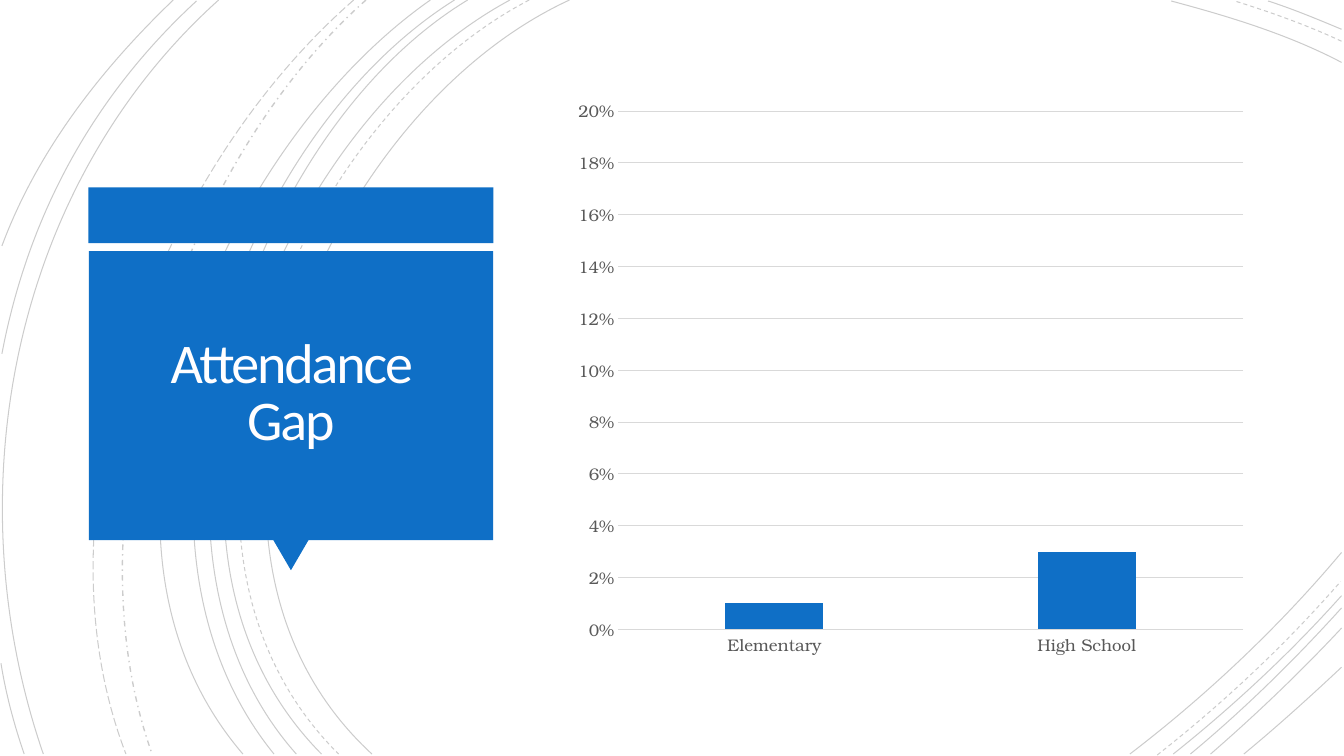
from dataclasses import dataclass

from lxml.etree import SubElement
from pptx import Presentation
from pptx.chart.data import CategoryChartData
from pptx.dml.color import RGBColor
from pptx.enum.chart import XL_CHART_TYPE, XL_TICK_MARK
from pptx.enum.dml import MSO_LINE
from pptx.enum.shapes import MSO_SHAPE
from pptx.enum.text import MSO_ANCHOR, PP_ALIGN
from pptx.oxml.ns import qn
from pptx.slide import Slide
from pptx.util import Pt

BLUE = RGBColor(0x0F, 0x6F, 0xC6)
WHITE = RGBColor(0xFF, 0xFE, 0xFF)
BLACK = RGBColor(0x00, 0x00, 0x00)
GREY_TEXT = RGBColor(0x59, 0x59, 0x59)
GREY_LINE = RGBColor(0xD9, 0xD9, 0xD9)
TITLE_FONT = "Calibri"
CHART_FONT = "TeX Gyre Bonum"


@dataclass
class Arc:
    """A cubic curve: start, two controls and end, as x, y pairs in points."""
    points: tuple[float, ...]
    dash: MSO_LINE = MSO_LINE.SOLID
    width: float = 0.75


@dataclass
class Block:
    kind: MSO_SHAPE
    left: float
    top: float
    width: float
    height: float
    rotation: float = 0


ARCS = [
    # Left sweep, from the inside out
    Arc((406.8, 0, 226.8, 82.8, 103, 388.8, 265.7, 538.6)),
    Arc((378, 0, 205.2, 90, 88.6, 386.6, 241.9, 538.6), MSO_LINE.DASH),
    Arc((364.3, 0, 194.4, 91.4, 79.2, 386.6, 229.7, 538.6)),
    Arc((334.1, 0, 175.7, 95.8, 79.2, 389.5, 211.7, 538.6)),
    Arc((324.7, 0, 166.3, 99.4, 69.8, 383.8, 195.8, 538.6)),
    Arc((307.4, 0, 156.2, 105.8, 38.2, 380.9, 173.5, 538.6)),
    Arc((261.4, 0, 126.7, 119.5, 46.8, 366.5, 108.7, 538.6), MSO_LINE.DASH_DOT, 1),
    Arc((252.7, 0, 113, 121.7, 20.9, 359.3, 90, 538.6), MSO_LINE.LONG_DASH),
    Arc((156.2, 0, 7.9, 133.2, -33.1, 352.8, 31, 538.6)),
    Arc((140.4, 0.7, 66.2, 69.1, 20.2, 154.1, 1.4, 252.7)),
    Arc((0.7, 473.8, 4.3, 496.1, 10.1, 517.7, 17.3, 538.6)),
    Arc((123.8, 0, 72, 49.7, 26.6, 108, 1.4, 175.7)),
    # Top right corner
    Arc((958.3, 44.6, 920.2, 24.5, 877, 11.5, 836.6, 0.7)),
    Arc((958.3, 29.5, 933.8, 18, 907.2, 8.6, 882, 0.7), MSO_LINE.DASH),
    Arc((958.3, 20.9, 941, 13.7, 923.8, 6.5, 905.8, 0.7)),
    # Bottom right corner
    Arc((807.1, 538.6, 861.8, 496.8, 913.7, 447.8, 958.3, 394.6)),
    Arc((826.6, 539.3, 873.4, 502.6, 918, 460.8, 957.6, 415.4), MSO_LINE.DASH),
    Arc((838.1, 538.6, 880.6, 504.7, 921.6, 466.6, 958.3, 425.5)),
    Arc((850.3, 538.6, 888.5, 506.9, 924.5, 471.6, 958.3, 434.2)),
    Arc((864.7, 538.6, 897.1, 510.5, 928.8, 480.2, 958.3, 448.6)),
    Arc((888.5, 538.6, 912.2, 519.1, 935.3, 498.2, 958.3, 476.6)),
]

BLOCKS = [
    Block(MSO_SHAPE.RECTANGLE, 63.2, 133.9, 289.2, 39.7),
    Block(MSO_SHAPE.ISOSCELES_TRIANGLE, 195.2, 385.7, 25.2, 21.6, 180),
    Block(MSO_SHAPE.RECTANGLE, 63.5, 179.4, 288.8, 206.5),
]


def add_arc(s: Slide, arc: Arc) -> None:
    start, *others = [(Pt(x), Pt(y)) for x, y in zip(arc.points[::2], arc.points[1::2])]
    builder = s.shapes.build_freeform(*start)
    builder.add_line_segments(others, close=False)
    sp = builder.convert_to_shape()

    # Join the three segments into one cubic curve
    segments = list(sp._element.iter(qn("a:lnTo")))
    outline = segments[0].getparent()
    curve = SubElement(outline, qn("a:cubicBezTo"))
    for segment in segments:
        curve.append(segment[0])
        outline.remove(segment)

    sp.shadow.inherit = False
    sp.fill.background()
    sp.line.width = Pt(arc.width)
    sp.line.dash_style = arc.dash
    sp.line.color.rgb = BLACK
    # Line opacity of 20%
    color = sp.line.fill._xPr.find(qn("a:solidFill"))[0]
    SubElement(color, qn("a:alpha"), val="20000")


def add_block(s: Slide, block: Block) -> None:
    sp = s.shapes.add_shape(block.kind, Pt(block.left), Pt(block.top),
                            Pt(block.width), Pt(block.height))
    sp.rotation = block.rotation
    sp.shadow.inherit = False
    sp.fill.solid()
    sp.fill.fore_color.rgb = BLUE
    sp.line.fill.background()


def add_title(s: Slide) -> None:
    sp = s.shapes.add_textbox(Pt(70), Pt(185), Pt(275.5), Pt(193.7))
    tf = sp.text_frame
    tf.word_wrap = True
    tf.vertical_anchor = MSO_ANCHOR.MIDDLE
    tf.margin_left = tf.margin_right = tf.margin_top = tf.margin_bottom = Pt(18)
    p = tf.paragraphs[0]
    p.alignment = PP_ALIGN.CENTER
    p.line_spacing = 0.85
    r = p.add_run()
    r.text = "Attendance Gap"
    r.font.size = Pt(40)
    r.font.name = TITLE_FONT
    r.font.color.rgb = WHITE
    r.font._element.set("spc", "-150")


def add_gap_chart(s: Slide) -> None:
    data = CategoryChartData(number_format="0%")
    data.categories = ["Elementary", "High School"]
    data.add_series("Series 1", [0.01, 0.03])
    chart = s.shapes.add_chart(XL_CHART_TYPE.COLUMN_CLUSTERED, Pt(403.2), Pt(63.2),
                               Pt(494.6), Pt(413.3), data).chart
    chart.has_title = False
    chart.has_legend = False
    chart.font.name = CHART_FONT
    chart.font.size = Pt(10)
    chart.font.color.rgb = BLACK

    # Columns
    plot = chart.plots[0]
    plot.vary_by_categories = False
    plot.gap_width = 219
    plot.overlap = -27
    fill = plot.series[0].format.fill
    fill.solid()
    fill.fore_color.rgb = BLUE

    # Axes and grid
    for axis in (chart.category_axis, chart.value_axis):
        axis.major_tick_mark = axis.minor_tick_mark = XL_TICK_MARK.NONE
        font = axis.tick_labels.font
        font.name = CHART_FONT
        font.size = Pt(12)
        font.color.rgb = GREY_TEXT
    values = chart.value_axis
    values.maximum_scale = 0.2
    values.tick_labels.number_format = "0%"
    values.tick_labels.number_format_is_linked = False
    values.format.line.fill.background()
    for line in (chart.category_axis.format.line, values.major_gridlines.format.line):
        line.color.rgb = GREY_LINE
        line.width = Pt(0.75)


def main() -> None:
    prs = Presentation()
    prs.slide_width, prs.slide_height = Pt(960), Pt(540)
    s = prs.slides.add_slide(prs.slide_layouts[6])
    for arc in ARCS:
        add_arc(s, arc)
    for block in BLOCKS:
        add_block(s, block)
    add_title(s)
    add_gap_chart(s)
    prs.save("out.pptx")


if __name__ == "__main__":
    main()
